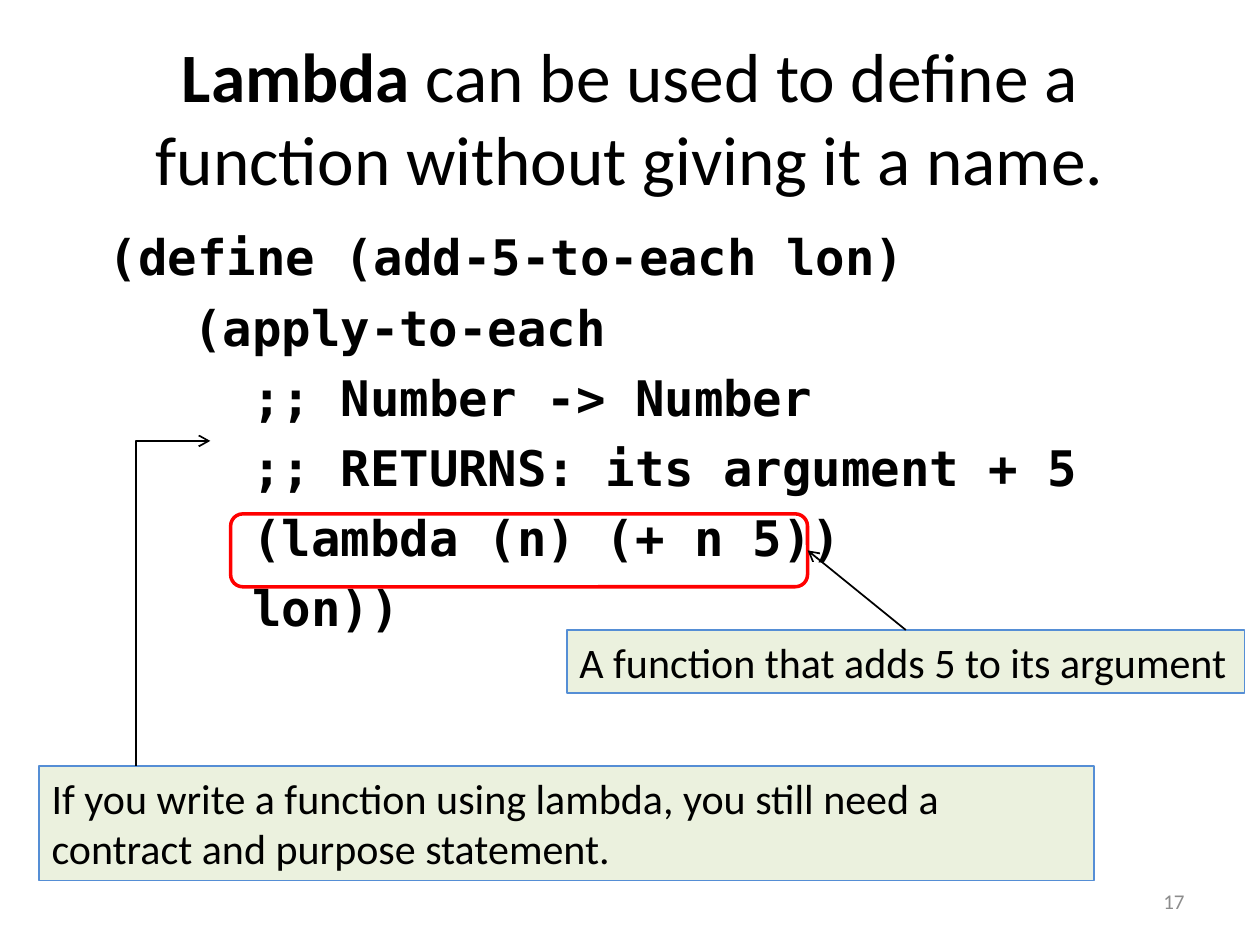
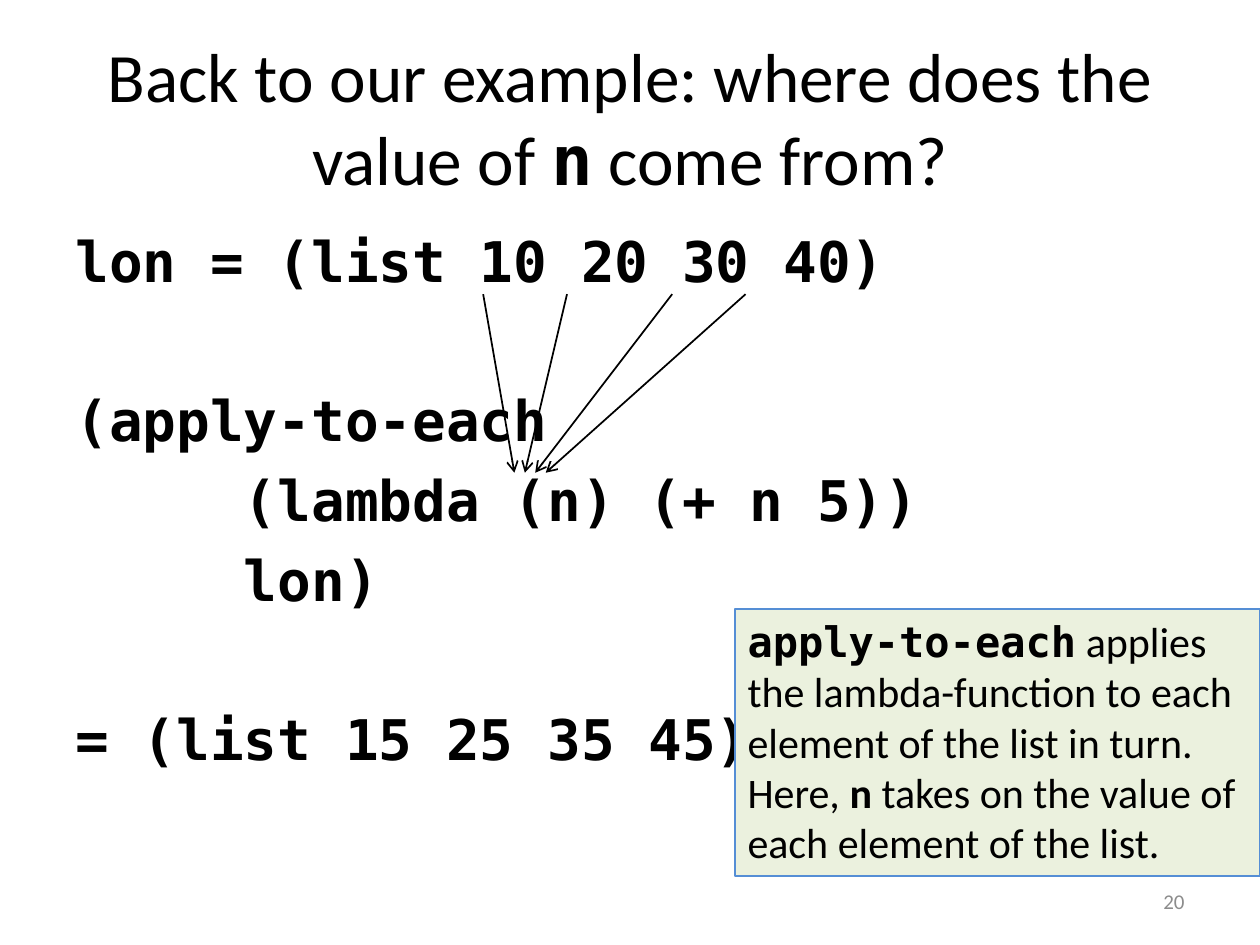
from lxml import etree
from pptx import Presentation
from pptx.dml.color import RGBColor
from pptx.enum.shapes import MSO_CONNECTOR, MSO_SHAPE
from pptx.enum.text import MSO_ANCHOR, MSO_AUTO_SIZE, PP_ALIGN
from pptx.oxml.ns import qn
from pptx.util import Cm, Pt

STRAIGHT, ELBOW = MSO_CONNECTOR.STRAIGHT, MSO_CONNECTOR.ELBOW
RECT, ROUND_RECT = MSO_SHAPE.RECTANGLE, MSO_SHAPE.ROUNDED_RECTANGLE
TOP, MIDDLE = MSO_ANCHOR.TOP, MSO_ANCHOR.MIDDLE
LEFT, CENTER, RIGHT = PP_ALIGN.LEFT, PP_ALIGN.CENTER, PP_ALIGN.RIGHT
GROW = MSO_AUTO_SIZE.SHAPE_TO_FIT_TEXT

BLACK, GREY, RED = "000000", "8C8C8C", "FF0000"
NOTE_FILL, NOTE_LINE = "EBF1DE", "558ED5"
SANS, MONO = "Calibri", "DejaVu Sans Mono"
CODE = dict(font=MONO, bold=True)


def rgb(value):
    return RGBColor.from_string(value)


def add_text(p, text, size=24, font=SANS, color=BLACK, bold=False):
    r = p.add_run()
    r.text = text
    r.font.size = Pt(size)
    r.font.name = font
    r.font.bold = bold
    r.font.color.rgb = rgb(color)


class Deck:
    """Style of the deck and the slide being filled."""

    def __init__(self):
        self.prs = Presentation()
        self.prs.slide_width, self.prs.slide_height = Cm(25.4), Cm(19.05)
        self.s = None

    def new_slide(self, title, number):
        self.s = self.prs.slides.add_slide(self.prs.slide_layouts[6])
        self.text_box((1.27, 0.76, 22.86, 3.18), title, MIDDLE, CENTER, size=39.6)
        self.text_box((18.2, 17.65, 5.93, 1.02), [(str(number), {})], MIDDLE, RIGHT,
                      size=12, color=GREY)

    def text_box(self, box, runs, anchor=TOP, align=LEFT, **style):
        """Runs are (text, format) pairs; style is their common format."""
        tf = self.s.shapes.add_textbox(*map(Cm, box)).text_frame
        tf.word_wrap = True
        tf.vertical_anchor = anchor
        self.fill_paragraph(tf.paragraphs[0], runs, align, **style)
        return tf

    def fill_paragraph(self, p, runs, align=LEFT, **style):
        p.alignment = align
        for text, extra in runs:
            add_text(p, text, **{**style, **extra})

    def code(self, lines, size):
        """Lines are (indent in characters, blank lines above, text)."""
        char_width = 0.602 * size
        gap = 0.2 * 1.164 * size
        pitch = 1.164 * size + gap
        tf = self.text_box((1.27, 4.45, 22.86, 12.57), [])
        for i, (indent, blanks, text) in enumerate(lines):
            p = tf.add_paragraph() if i else tf.paragraphs[0]
            p.space_before = Pt(round(gap + blanks * pitch, 1))
            p._p.get_or_add_pPr().set("marL", str(Pt(indent * char_width)))
            add_text(p, text, size, **CODE)

    def shape(self, kind, box, line, width, fill=None):
        sp = self.s.shapes.add_shape(kind, *map(Cm, box))
        sp.shadow.inherit = False
        sp.line.color.rgb = rgb(line)
        sp.line.width = Pt(width)
        if fill:
            sp.fill.solid()
            sp.fill.fore_color.rgb = rgb(fill)
        else:
            sp.fill.background()
        return sp

    def note(self, box, runs, wrap=True):
        sp = self.shape(RECT, box, NOTE_LINE, 1, NOTE_FILL)
        tf = sp.text_frame
        tf.word_wrap = wrap
        tf.auto_size = GROW
        tf.vertical_anchor = TOP
        self.fill_paragraph(tf.paragraphs[0], runs)
        return sp

    def arrow(self, start, end, kind=STRAIGHT):
        c = self.s.shapes.add_connector(kind, *map(Cm, start + end))
        c.line.color.rgb = rgb(BLACK)
        c.line.width = Pt(1)
        etree.SubElement(c.line._get_or_add_ln(), qn("a:tailEnd"), type="arrow")
        sp_pr = c._element.spPr
        etree.SubElement(sp_pr, qn("a:effectLst"))
        if kind == ELBOW:  # turn at the start, so the line rises first
            av = sp_pr.find(qn("a:prstGeom")).find(qn("a:avLst"))
            etree.SubElement(av, qn("a:gd"), name="adj1", fmla="val 0")
        return c


def lambda_slide(deck):
    deck.new_slide([("Lambda", dict(bold=True)),
                    (" can be used to define a function without giving it a name.", {})], 17)
    deck.code([(1.14, 0, "(define (add-5-to-each lon)"),
               (4, 0, "(apply-to-each"),
               (6, 0, ";; Number -> Number"),
               (6, 0, ";; RETURNS: its argument + 5"),
               (6, 0, "(lambda (n) (+ n 5))"),
               (6, 0, "lon))")], 28)
    # Notes and the marked expression
    deck.note((0.79, 15.44, 21.26, 2.31),
              [("If you write a function using lambda, you still need a contract "
                "and purpose statement.", {})])
    marker = deck.shape(ROUND_RECT, (4.65, 10.36, 11.63, 1.47), RED, 2)
    meaning = deck.note((11.43, 12.7, 13.66, 1.27),
                        [("A function that adds 5 to its argument", {})], wrap=False)
    # Arrows from the notes to the code
    c = deck.arrow((18.26, 12.7), (16.28, 11.1))
    c.begin_connect(meaning, 0)
    c.end_connect(marker, 3)
    deck.arrow((2.74, 15.44), (4.24, 8.89), ELBOW)


def value_slide(deck):
    deck.new_slide([("Back to our example: where does the value of ", {}),
                    ("n", CODE), (" come from?", {})], 20)
    deck.code([(0, 0, "lon = (list 10 20 30 40)"),
               (0, 1, "(apply-to-each"),
               (5, 0, "(lambda (n) (+ n 5))"),
               (5, 0, "lon)"),
               (0, 1, "= (list 15 25 35 45)")], 32)
    # One arrow from each list element to the parameter
    for i, element_x in enumerate((9.74, 11.43, 13.55, 15.03)):
        deck.arrow((element_x, 5.93), (10.37 + 0.21 * i, 9.53))
    deck.note((14.82, 12.28, 10.58, 5.38),
              [("apply-to-each", CODE),
               (" applies the lambda-function to each element of the list in turn. Here, ", {}),
               ("n", dict(bold=True)),
               (" takes on the value of each element of the list.", {})])


def main():
    deck = Deck()
    lambda_slide(deck)
    value_slide(deck)
    deck.prs.save("out.pptx")


if __name__ == "__main__":
    main()
